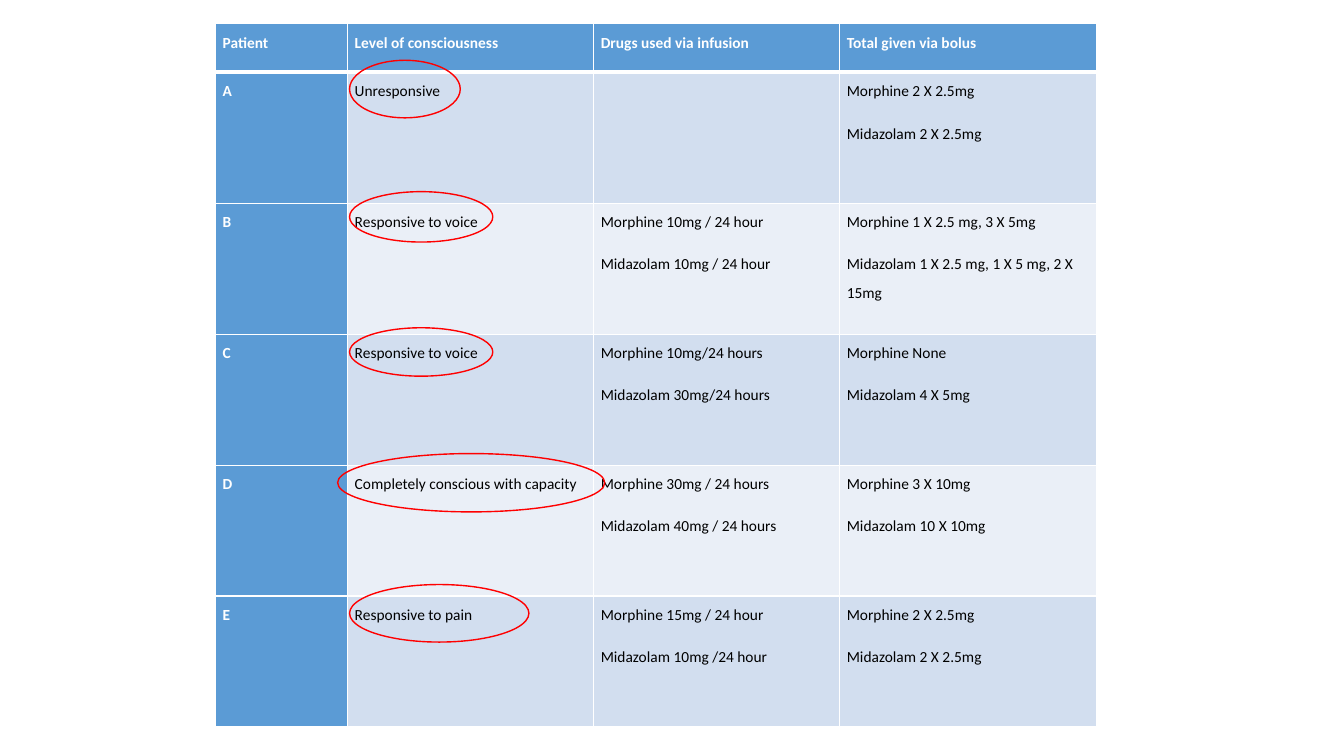
from lxml.etree import SubElement
from pptx import Presentation
from pptx.dml.color import RGBColor
from pptx.enum.shapes import MSO_SHAPE
from pptx.oxml.ns import qn
from pptx.util import Cm, Pt

COLOURS = {
    "header": "5B9BD5",
    "dark band": "D2DEEF",
    "light band": "EAEFF7",
    "border": "FFFFFF",
    "header text": "FFFFFF",
    "text": "000000",
    "ring": "FF0000",
}

COLUMN_WIDTHS = [3.33, 6.2, 6.2, 6.48]
ROW_HEIGHTS = [1.22] + [3.3] * 5
PATIENT_ROWS = [
    ["Patient", "Level of consciousness", "Drugs used via infusion", "Total given via bolus"],
    ["A", "Unresponsive", "", "Morphine 2 X 2.5mg\nMidazolam 2 X 2.5mg"],
    ["B", "Responsive to voice", "Morphine 10mg / 24 hour\nMidazolam 10mg / 24 hour",
     "Morphine 1 X 2.5 mg, 3 X 5mg\nMidazolam 1 X 2.5 mg, 1 X 5 mg, 2 X 15mg"],
    ["C", "Responsive to voice", "Morphine 10mg/24 hours\nMidazolam 30mg/24 hours",
     "Morphine None\nMidazolam 4 X 5mg"],
    ["D", "Completely conscious with capacity",
     "Morphine 30mg / 24 hours\nMidazolam 40mg / 24 hours",
     "Morphine 3 X 10mg\nMidazolam 10 X 10mg"],
    ["E", "Responsive to pain", "Morphine 15mg / 24 hour\nMidazolam 10mg /24 hour",
     "Morphine 2 X 2.5mg\nMidazolam 2 X 2.5mg"],
]
# left, top, width, height of the ring around each level of consciousness
RINGS = [
    (8.81, 1.52, 2.79, 1.45),
    (8.81, 4.83, 3.61, 1.27),
    (8.81, 8.26, 3.61, 1.22),
    (8.51, 11.43, 6.73, 1.47),
    (8.81, 14.73, 4.52, 1.45),
]


class SlideBuilder:
    font_name = "Calibri"
    font_size = Pt(11)

    def __init__(self, slide):
        self.slide = slide

    def colour(self, name):
        return RGBColor.from_string(COLOURS[name])

    def add_table(self, left, top, rows, column_widths, row_heights):
        table = self.slide.shapes.add_table(
            len(rows), len(column_widths), Cm(left), Cm(top),
            Cm(sum(column_widths)), Cm(sum(row_heights))).table
        table.first_row = table.horz_banding = False
        for column, width in zip(table.columns, column_widths):
            column.width = Cm(width)
        for row_index, (row, height) in enumerate(zip(rows, row_heights)):
            table.rows[row_index].height = Cm(height)
            for column_index, text in enumerate(row):
                self.fill_cell(table.cell(row_index, column_index), text,
                               row_index, column_index)

    def fill_cell(self, cell, text, row_index, column_index):
        is_header = row_index == 0 or column_index == 0
        band = "dark band" if row_index % 2 else "light band"
        cell.margin_left = cell.margin_right = Cm(0.19)
        cell.margin_top = cell.margin_bottom = 0
        self.add_borders(cell, top=3 if row_index == 1 else 1,
                         bottom=3 if row_index == 0 else 1)
        cell.fill.solid()
        cell.fill.fore_color.rgb = self.colour("header" if is_header else band)
        cell.text = text
        for paragraph in cell.text_frame.paragraphs:
            paragraph.line_spacing = 1.5
            paragraph.space_after = Pt(10)
            font = paragraph.font
            font.name = self.font_name
            font.size = self.font_size
            font.bold = is_header
            font.color.rgb = self.colour("header text" if is_header else "text")

    def add_borders(self, cell, top, bottom):
        """Draw the four cell borders; top and bottom are widths in points."""
        properties = cell._tc.get_or_add_tcPr()
        for side, width in (("L", 1), ("R", 1), ("T", top), ("B", bottom)):
            line = SubElement(properties, qn(f"a:ln{side}"), w=str(Pt(width)))
            fill = SubElement(line, qn("a:solidFill"))
            SubElement(fill, qn("a:srgbClr"), val=COLOURS["border"])

    def add_ring(self, left, top, width, height):
        ring = self.slide.shapes.add_shape(
            MSO_SHAPE.OVAL, Cm(left), Cm(top), Cm(width), Cm(height))
        ring.shadow.inherit = False
        ring.fill.background()
        ring.line.color.rgb = self.colour("ring")
        ring.line.width = Pt(1)


def main():
    presentation = Presentation()
    presentation.slide_width = Cm(33.87)
    presentation.slide_height = Cm(19.05)
    slide = presentation.slides.add_slide(presentation.slide_layouts[6])
    builder = SlideBuilder(slide)
    builder.add_table(5.42, 0.6, PATIENT_ROWS, COLUMN_WIDTHS, ROW_HEIGHTS)
    for ring in RINGS:
        builder.add_ring(*ring)
    presentation.save("out.pptx")


if __name__ == "__main__":
    main()
